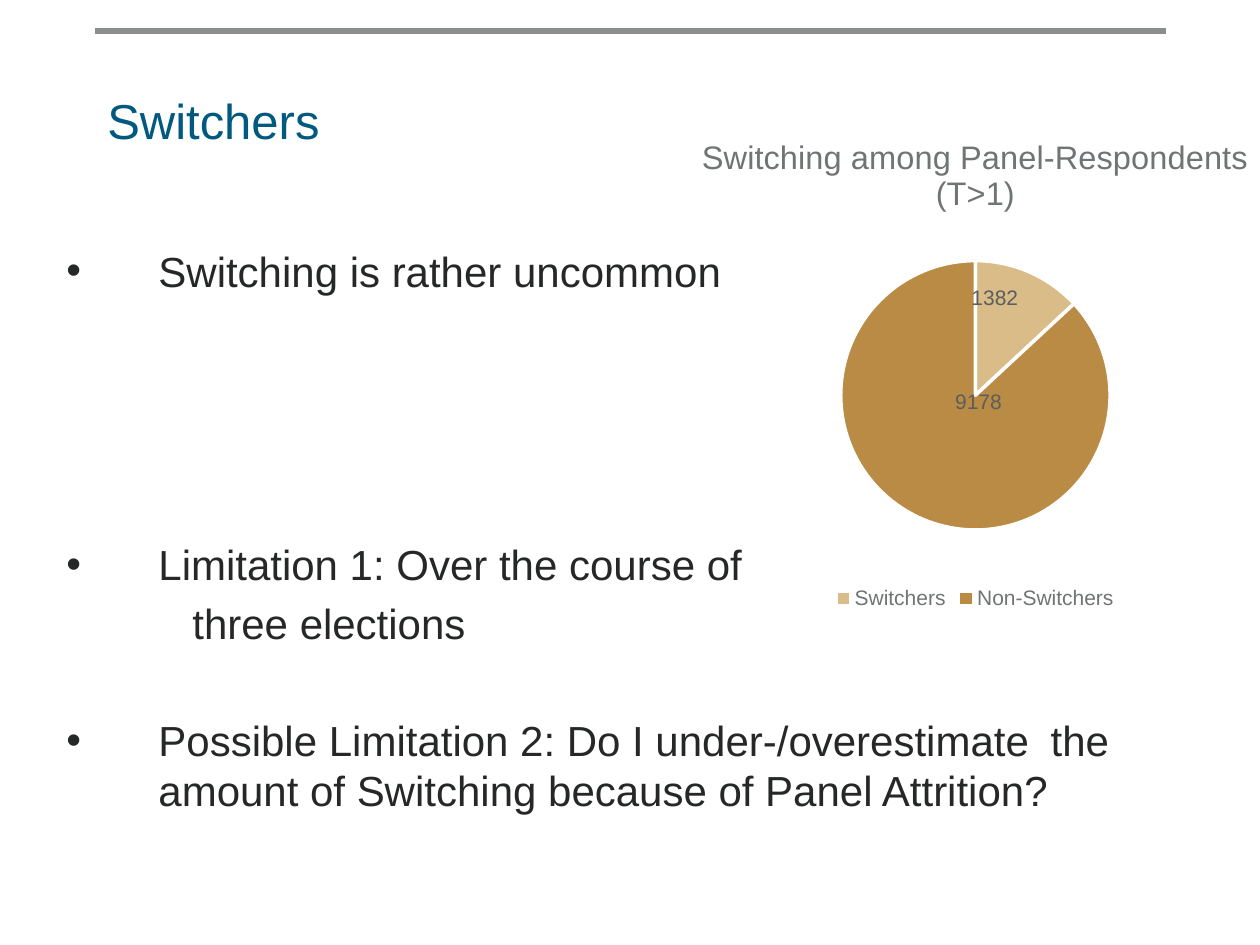
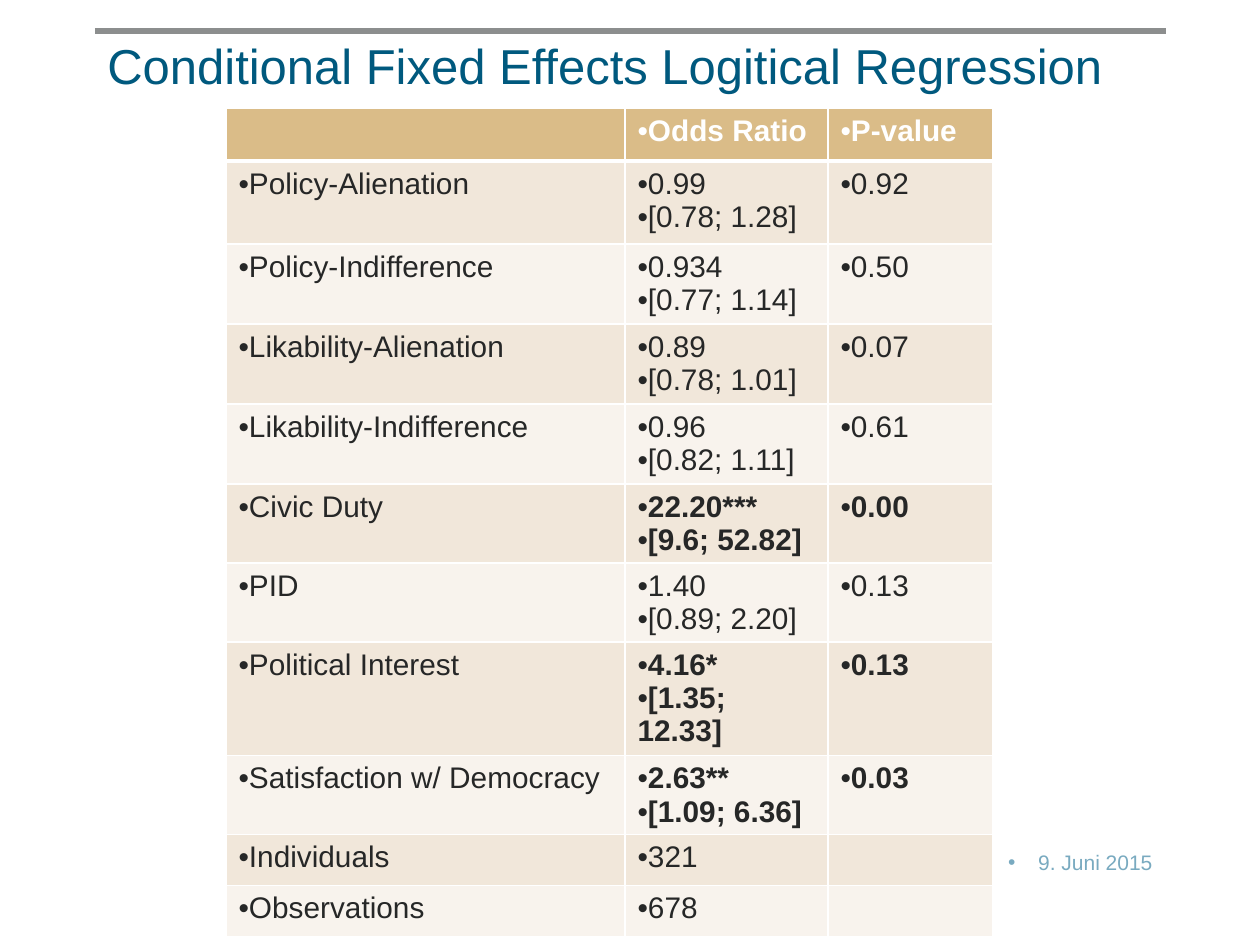
"""Build two slides on vote switching: a pie chart and a regression table."""
from lxml.etree import SubElement as Sub
from pptx import Presentation
from pptx.chart.data import CategoryChartData as Data
from pptx.dml.color import RGBColor
from pptx.enum.chart import XL_CHART_TYPE as Kind, XL_LABEL_POSITION as Spot
from pptx.enum.chart import XL_LEGEND_POSITION as Side
from pptx.enum.shapes import MSO_CONNECTOR as Conn
from pptx.enum.text import MSO_ANCHOR as Anchor, PP_ALIGN as Align
from pptx.oxml import parse_xml
from pptx.oxml.ns import nsdecls, qn
from pptx.util import Pt

SCALE = 914400 / 126
FONT = "Arial"
BLUE, PALE, INK, GREY, RULE = "00597E", "79AAC0", "262727", "717474", "8C8E8E"
WHITE, SAND, GOLD, LABEL = "FFFFFF", "DABC88", "B98B44", "5B5E5E"
BANDS = "F1E7DA", "F8F3ED"
rgb = RGBColor.from_string


def px(*nums):
    return [round(n * SCALE) for n in nums]


def write(para, text, size, color, bold=False, left=0, hang=None):
    props = para._p.get_or_add_pPr()
    left, dent = px(left, -(hang or 0))
    props.set("marL", str(left))
    props.set("indent", str(dent))
    if hang is not None:
        Sub(props, qn("a:buFont")).set("typeface", FONT)
        Sub(props, qn("a:buChar")).set("char", "•")
    run = para.add_run()
    run.text = text
    font = run.font
    font.name, font.size, font.bold = FONT, Pt(size), bold
    font.color.rgb = rgb(color)


deck = Presentation()
deck.slide_width, deck.slide_height = px(1260, 945)
pie, grid = [deck.slides.add_slide(deck.slide_layouts[6]) for _ in range(2)]

for slide in (pie, grid):
    x1, y1, x2, y2 = px(95, 31, 1166, 31)
    rule = slide.shapes.add_connector(Conn.STRAIGHT, x1, y1, x2, y2)
    rule.line.color.rgb = rgb(RULE)
    rule.line.width = Pt(3.5)
    Sub(rule._element.spPr, qn("a:effectLst"))

points = [
    ("Switching is rather uncommon", 92, 92, 0),
    ("Limitation 1: Over the course of", 92, 92, 139),
    ("three elections", 126, None, 4.8),
    ("Possible Limitation 2: Do I under-/overestimate\tthe amount of "
     "Switching because of Panel Attrition?", 92, 92, 38),
]
boxes = [
    (pie, (95, 84, 1071, 158), 28, BLUE, Align.LEFT,
     [("Switchers", 0, None, 0)]),
    (pie, (54, 239, 1101, 548), 24, INK, Align.LEFT, points),
    (grid, (95, 29, 1071, 158), 28, BLUE, Align.LEFT,
     [("Conditional Fixed Effects Logitical Regression", 0, None, 0)]),
    (grid, (945, 843, 220, 38), 12, PALE, Align.RIGHT,
     [("9. Juni 2015", 30, 30, 0)]),
]
for slide, rect, size, color, align, lines in boxes:
    frame = slide.shapes.add_textbox(*px(*rect)).text_frame
    frame.word_wrap = True
    frame.vertical_anchor = Anchor.TOP
    for num, (text, left, hang, gap) in enumerate(lines):
        para = frame.add_paragraph() if num else frame.paragraphs[0]
        para.alignment = align
        if num:
            para.space_before = Pt(gap)
        write(para, text, size, color, left=left, hang=hang)

data = Data()
data.categories = ["Switchers", "Non-Switchers"]
data.add_series("Series 1", (1382, 9178))
chart = pie.shapes.add_chart(Kind.PIE, *px(600, 116, 751, 499), data).chart
chart.font.name, chart.font.size = FONT, Pt(10)
chart.font.color.rgb = rgb(INK)
chart.has_title = True
head = chart.chart_title.text_frame
write(head.paragraphs[0], "Switching among Panel-Respondents", 18.6, GREY)
write(head.add_paragraph(), "(T>1)", 18.6, GREY)
chart.has_legend = True
key = chart.legend
key.position, key.include_in_layout = Side.BOTTOM, False
key.font.name, key.font.size = FONT, Pt(12)
key.font.color.rgb = rgb(GREY)

plot = chart.plots[0]
plot.vary_by_categories = True
for num, (color, dx, dy) in enumerate([(SAND, -0.01, -0.07),
                                       (GOLD, 0.04, -0.11)]):
    point = plot.series[0].points[num]
    point.format.fill.solid()
    point.format.fill.fore_color.rgb = rgb(color)
    point.format.line.color.rgb = rgb(WHITE)
    point.format.line.width = Pt(2)
    label = point.data_label
    label.font.name, label.font.size = FONT, Pt(12)
    label.font.color.rgb = rgb(LABEL)
    label.position = Spot.CENTER
    node = plot.series[0]._element.find(qn("c:dLbls")).findall(qn("c:dLbl"))[num]
    node.insert(1, parse_xml(
        f'<c:layout {nsdecls("c")}><c:manualLayout><c:x val="{dx}"/>'
        f'<c:y val="{dy}"/></c:manualLayout></c:layout>'))

area = chart._chartSpace.chart.plotArea
for old in area.findall(qn("c:layout")):
    area.remove(old)
area.insert(0, parse_xml(
    f'<c:layout {nsdecls("c")}><c:manualLayout><c:layoutTarget val="inner"/>'
    '<c:xMode val="edge"/><c:yMode val="edge"/><c:x val="0.32"/>'
    '<c:y val="0.29"/><c:w val="0.36"/><c:h val="0.54"/>'
    '</c:manualLayout></c:layout>'))

rows = [
    ("", "Odds Ratio", "P-value"),
    ("Policy-Alienation", "0.99|[0.78; 1.28]", "0.92"),
    ("Policy-Indifference", "0.934|[0.77; 1.14]", "0.50"),
    ("Likability-Alienation", "0.89|[0.78; 1.01]", "0.07"),
    ("Likability-Indifference", "0.96|[0.82; 1.11]", "0.61"),
    ("Civic Duty", "22.20***|[9.6; 52.82]", "0.00"),
    ("PID", "1.40|[0.89; 2.20]", "0.13"),
    ("Political Interest", "4.16*|[1.35; 12.33]", "0.13"),
    ("Satisfaction w/ Democracy", "2.63**|[1.09; 6.36]", "0.03"),
    ("Individuals", "321", ""),
    ("Observations", "678", ""),
]
tall = px(53, 83, 80, 80, 80, 79, 79, 113, 79, 51, 51)
wide = px(399, 203, 165)
table = grid.shapes.add_table(len(rows), 3, *px(226, 108, 767, 828)).table
for col, width in zip(table.columns, wide):
    col.width = width
for r, row in enumerate(rows):
    table.rows[r].height = tall[r]
    for c, text in enumerate(row):
        cell = table.cell(r, c)
        cell.margin_bottom = 0
        props = cell._tc.get_or_add_tcPr()
        for edge in "LRTB":
            thick = (r == 0 and edge == "B") or (r == 1 and edge == "T")
            line = Sub(props, qn(f"a:ln{edge}"), w=str(Pt(3 if thick else 1)))
            Sub(Sub(line, qn("a:solidFill")), qn("a:srgbClr"), val=WHITE)
        cell.fill.solid()
        cell.fill.fore_color.rgb = rgb(BANDS[(r - 1) % 2] if r else SAND)
        bold = r == 0 or (c > 0 and "*" in row[1])
        for num, part in enumerate(text.split("|") if text else []):
            frame = cell.text_frame
            para = frame.add_paragraph() if num else frame.paragraphs[0]
            write(para, part, 17, INK if r else WHITE, bold, hang=0)

deck.save("out.pptx")
